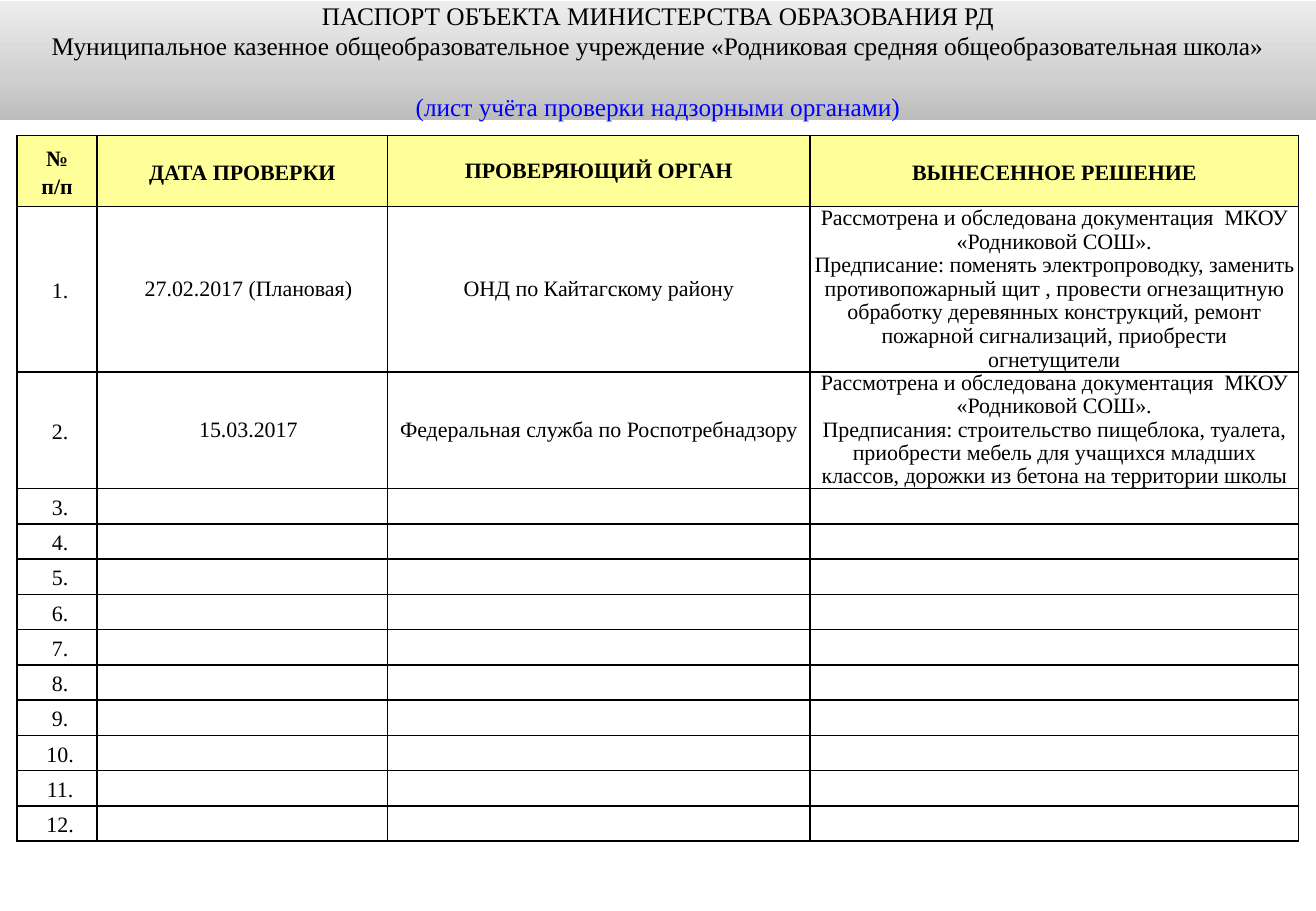
import pptx
import pptx.util
import pptx.dml.color
import pptx.enum.text
import pptx.oxml
import pptx.oxml.ns

Pt = pptx.util.Pt
RGB = pptx.dml.color.RGBColor
ALIGN = pptx.enum.text.PP_ALIGN
ANCHOR = pptx.enum.text.MSO_ANCHOR

FONT = "Times New Roman"
BLACK = RGB(0x00, 0x00, 0x00)
BLUE = RGB(0x00, 0x00, 0xFF)
WHITE = RGB(0xFF, 0xFF, 0xFF)
YELLOW = RGB(0xFF, 0xFF, 0x99)
SHADES = [(0, RGB(0xBC, 0xBC, 0xBC)), (35, RGB(0xD0, 0xD0, 0xD0)),
          (100, RGB(0xED, 0xED, 0xED))]

TITLE = [
    ("ПАСПОРТ ОБЪЕКТА МИНИСТЕРСТВА ОБРАЗОВАНИЯ РД", BLACK, 0),
    ("Муниципальное казенное общеобразовательное учреждение "
     "«Родниковая средняя общеобразовательная школа»", BLACK, 0),
    ("(лист учёта проверки надзорными органами)", BLUE, 18),
]
HEADS = ["№\nп/п", "ДАТА ПРОВЕРКИ", "ПРОВЕРЯЮЩИЙ ОРГАН", "ВЫНЕСЕННОЕ РЕШЕНИЕ"]
REVIEW = "Рассмотрена и обследована документация  МКОУ «Родниковой СОШ».\n"
CHECKS = [
    ("27.02.2017 (Плановая)", "ОНД по Кайтагскому району",
     REVIEW + "Предписание: поменять электропроводку, заменить "
     "противопожарный щит , провести огнезащитную обработку деревянных "
     "конструкций, ремонт пожарной сигнализаций, приобрести огнетущители"),
    ("15.03.2017", "Федеральная служба по Роспотребнадзору",
     REVIEW + "Предписания: строительство пищеблока, туалета, приобрести "
     "мебель для учащихся младших классов, дорожки из бетона на территории школы"),
]
COUNT = 12
WIDTHS = [47.5, 172, 250.5, 289.5]
HEIGHTS = [42, 98, 69.2] + [20.9] * (COUNT - len(CHECKS))


def write(frame, text, size=13, color=BLACK, bold=False, lead=1.15,
          indent=0, before=0, more=False):
    for i, line in enumerate(text.split("\n")):
        para = frame.add_paragraph() if more or i else frame.paragraphs[0]
        para.alignment = ALIGN.CENTER
        para.line_spacing = lead
        para.space_before = Pt(before)
        para.space_after = Pt(0)
        if indent:
            para._p.get_or_add_pPr().set("marL", str(Pt(indent)))
        run = para.add_run()
        run.text = line
        run.font.name = FONT
        run.font.size = Pt(size)
        run.font.bold = bold
        run.font.color.rgb = color


def shade(shape):
    stops = "".join(
        f'<a:gs pos="{pos * 1000}"><a:srgbClr val="{color}"/></a:gs>'
        for pos, color in SHADES)
    shape.element.spPr.append(pptx.oxml.parse_xml(
        f'<a:gradFill {pptx.oxml.ns.nsdecls("a")} rotWithShape="1">'
        f'<a:gsLst>{stops}</a:gsLst><a:lin ang="16200000" scaled="0"/></a:gradFill>'))


def border(cell):
    props = cell._tc.get_or_add_tcPr()
    for i, side in enumerate("LRTB"):
        props.insert(i, pptx.oxml.parse_xml(
            f'<a:ln{side} {pptx.oxml.ns.nsdecls("a")} w="{Pt(1)}">'
            f'<a:solidFill><a:srgbClr val="{BLACK}"/></a:solidFill></a:ln{side}>'))


def add_title(slide):
    title = slide.shapes.title
    title.left, title.top = Pt(0), Pt(0.7)
    title.width, title.height = Pt(780), Pt(70.6)
    shade(title)
    frame = title.text_frame
    frame.auto_size = pptx.enum.text.MSO_AUTO_SIZE.NONE
    frame.word_wrap = True
    frame.vertical_anchor = ANCHOR.MIDDLE
    for i, (text, color, before) in enumerate(TITLE):
        write(frame, text, size=15, color=color, lead=Pt(18),
              before=before, more=i > 0)


def add_log(slide):
    table = slide.shapes.add_table(
        len(HEIGHTS), len(WIDTHS), Pt(10.1), Pt(80.4),
        Pt(sum(WIDTHS)), Pt(sum(HEIGHTS))).table
    table.first_row = False
    table.horz_banding = False
    for col, width in zip(table.columns, WIDTHS):
        col.width = Pt(width)
    for row, height in zip(table.rows, HEIGHTS):
        row.height = Pt(height)
    blank = [("", "", "")] * (COUNT - len(CHECKS))
    rows = [HEADS] + [(f"{n}.", *check)
                      for n, check in enumerate(CHECKS + blank, 1)]
    for r, texts in enumerate(rows):
        for c, text in enumerate(texts):
            cell = table.cell(r, c)
            cell.margin_left = cell.margin_right = Pt(2.2)
            cell.margin_top = cell.margin_bottom = Pt(0)
            cell.vertical_anchor = ANCHOR.MIDDLE
            cell.fill.solid()
            cell.fill.fore_color.rgb = WHITE if r else YELLOW
            border(cell)
            if r == 0:
                lead, indent = Pt(14) if c == 2 else 1.15, 0
            elif c == 0:
                lead, indent = 1.15, 3.6
            else:
                lead = Pt(13.8 if (r, c) == (2, 3) else 14)
                indent = 7.2 if c == 1 else 0
            write(cell.text_frame, text, bold=r == 0, lead=lead, indent=indent)


def main():
    deck = pptx.Presentation()
    deck.slide_width, deck.slide_height = Pt(780), Pt(540)
    slide = deck.slides.add_slide(deck.slide_layouts[5])
    add_title(slide)
    add_log(slide)
    deck.save("out.pptx")


if __name__ == "__main__":
    main()
